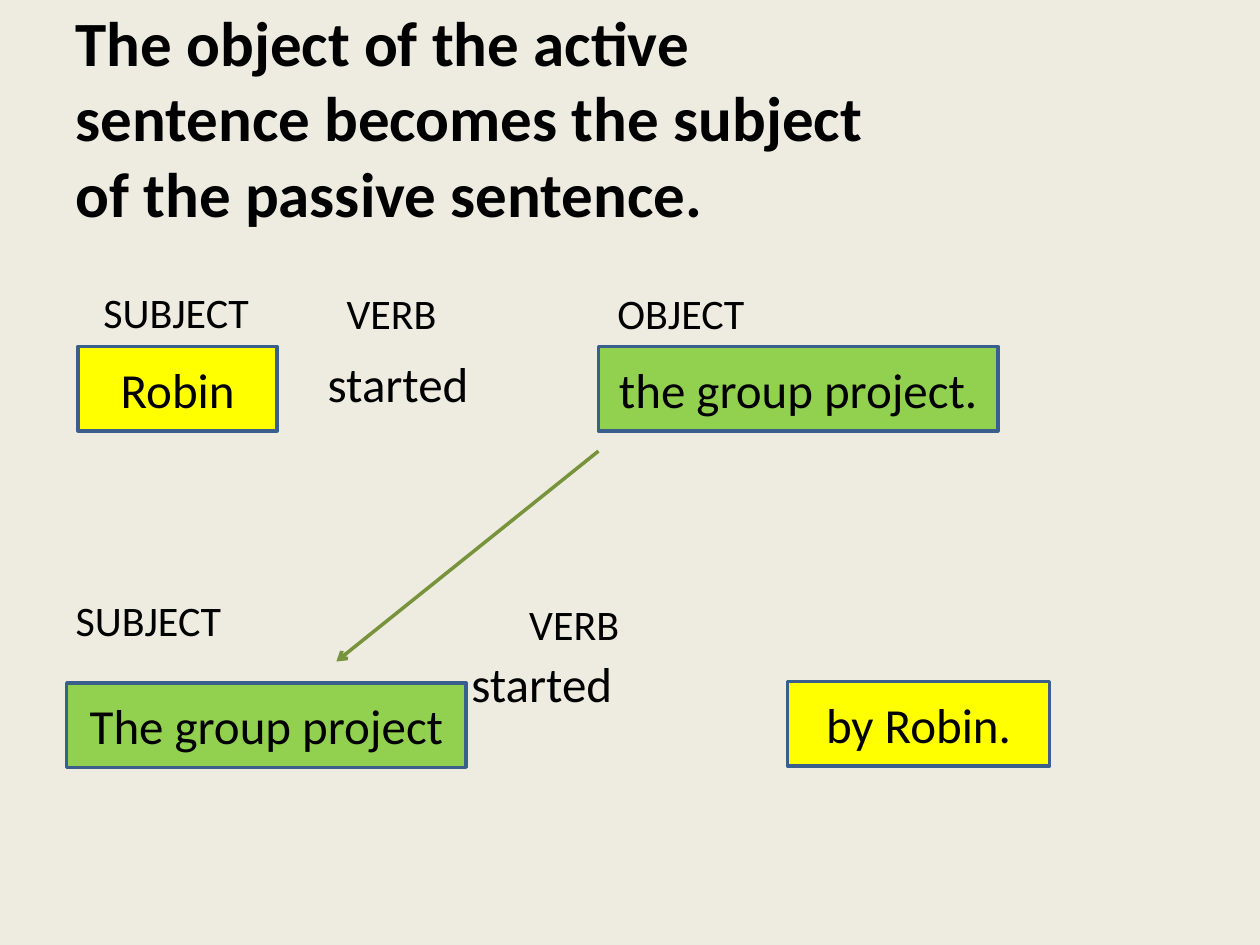
"""Build a slide showing how an active object becomes a passive subject."""
from lxml.etree import SubElement
from pptx import Presentation
from pptx.dml.color import RGBColor
from pptx.enum.shapes import MSO_CONNECTOR, MSO_SHAPE
from pptx.enum.text import MSO_ANCHOR, MSO_AUTO_SIZE, PP_ALIGN
from pptx.oxml.ns import qn
from pptx.util import Inches, Pt

COLORS = {
    "background": "EEECE1",
    "text": "000000",
    "yellow": "FFFF00",
    "green": "92D050",
    "border": "3A5F8C",
    "arrow": "77933C",
}


def color(name):
    return RGBColor.from_string(COLORS[name])


def format_text(para, **values):
    for name, value in {"name": "Calibri", **values}.items():
        setattr(para.font, name, value)
    para.font.color.rgb = color("text")


deck = Presentation()
deck.slide_width, deck.slide_height = Inches(10), Inches(7.5)
page = deck.slides.add_slide(deck.slide_layouts[1])
page.background.fill.solid()
page.background.fill.fore_color.rgb = color("background")

title, body = page.shapes.title, page.placeholders[1]
for holder, bounds in ((title, (0.5, 0.3, 6.92, 1.25)), (body, (0.5, 1.75, 9, 4.95))):
    holder.left, holder.top, holder.width, holder.height = map(Inches, bounds)
    holder.text_frame.auto_size = MSO_AUTO_SIZE.NONE
    holder.text_frame.word_wrap = True

title.text_frame.text = "The object of the active sentence becomes the subject of the passive sentence."
title.text_frame.vertical_anchor = MSO_ANCHOR.MIDDLE
heading = title.text_frame.paragraphs[0]
heading.alignment = PP_ALIGN.LEFT
format_text(heading, size=Pt(36), bold=True)

sentence_lines = [
    ("SUBJECT", 24, 0, 0.22),
    ("started", 28, 10, 2),
    ("SUBJECT", 24, 104, 0),
    ("started", 28, 5, 3.14),
]
frame = body.text_frame
frame.margin_top = Inches(0.52)
for index, (words, size, gap, indent) in enumerate(sentence_lines):
    para = frame.add_paragraph() if index else frame.paragraphs[0]
    para.text = words
    properties = para._p.get_or_add_pPr()
    properties.set("marL", str(Inches(indent)))
    properties.set("indent", "0")
    SubElement(properties, qn("a:buNone"))
    para.space_before = Pt(gap)
    format_text(para, size=Pt(size))

for words, left, top in (("VERB", 2.75, 2.28), ("OBJECT", 4.9, 2.28), ("VERB", 4.2, 4.75)):
    label = page.shapes.add_textbox(Inches(left), Inches(top), Inches(1.25), Inches(0.41))
    label.text_frame.word_wrap = True
    for side in ("left", "top", "right", "bottom"):
        setattr(label.text_frame, f"margin_{side}", 0)
    label.text_frame.text = words
    format_text(label.text_frame.paragraphs[0], size=Pt(24))

phrases = [
    ("Robin", "yellow", 0.62, 2.75, 1.58),
    ("the group project.", "green", 4.75, 2.75, 3.17),
    ("The group project", "green", 0.53, 5.42, 3.17),
    ("by Robin.", "yellow", 6.25, 5.41, 2.08),
]
for words, fill, left, top, width in phrases:
    box = page.shapes.add_shape(
        MSO_SHAPE.RECTANGLE, Inches(left), Inches(top), Inches(width), Inches(0.67)
    )
    box.shadow.inherit = False
    box.fill.solid()
    box.fill.fore_color.rgb = color(fill)
    box.line.color.rgb = color("border")
    box.line.width = Pt(2)
    box.text_frame.word_wrap = True
    box.text_frame.vertical_anchor = MSO_ANCHOR.MIDDLE
    para = box.text_frame.paragraphs[0]
    para.text = words
    para.alignment = PP_ALIGN.CENTER
    format_text(para, size=Pt(28))

arrow = page.shapes.add_connector(
    MSO_CONNECTOR.STRAIGHT, Inches(4.75), Inches(3.58), Inches(2.67), Inches(5.25)
)
arrow.line.color.rgb = color("arrow")
arrow.line.width = Pt(2)
SubElement(arrow.line._get_or_add_ln(), qn("a:tailEnd"), type="arrow")
SubElement(arrow._element.spPr, qn("a:effectLst"))

deck.save("out.pptx")
